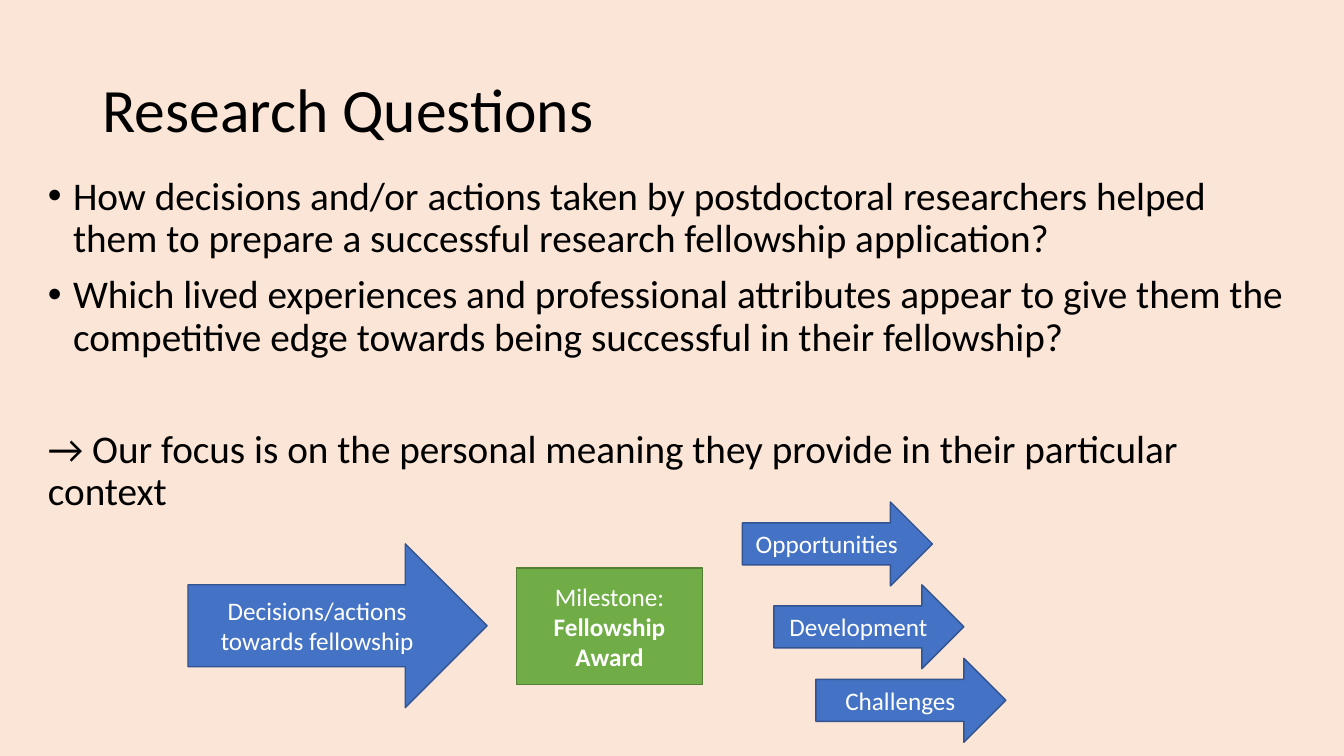
from lxml.etree import SubElement
from pptx import Presentation
from pptx.dml.color import RGBColor
from pptx.enum.shapes import MSO_SHAPE as Shape
from pptx.enum.text import MSO_ANCHOR as Anchor, MSO_AUTO_SIZE as AutoSize, PP_ALIGN as Align
from pptx.oxml.ns import qn
from pptx.util import Emu, Pt

PX = 9525  # 96 px to the inch
FONT = "Calibri"

PEACH = RGBColor(0xFB, 0xE5, 0xD6)
BLACK = RGBColor(0x00, 0x00, 0x00)
WHITE = RGBColor(0xFF, 0xFF, 0xFF)
BLUE = RGBColor(0x44, 0x72, 0xC4)
DARK_BLUE = RGBColor(0x32, 0x54, 0x91)
GREEN = RGBColor(0x70, 0xAD, 0x47)
DARK_GREEN = RGBColor(0x53, 0x80, 0x35)

QUESTIONS = [
    "How decisions and/or actions taken by postdoctoral researchers helped "
    "them to prepare a successful research fellowship application?",
    "Which lived experiences and professional attributes appear to give them "
    "the competitive edge towards being successful in their fellowship?",
]
FOCUS = "→ Our focus is on the personal meaning they provide in their particular context"
OUTCOMES = [
    ("Opportunities", 707, 478),
    ("Development", 737, 557),
    ("Challenges", 777, 627),
]


def px(length):
    return Emu(length * PX)


def set_values(target, values):
    for name, value in values.items():
        setattr(target, name, value)


class SlideBuilder:
    def __init__(self, presentation):
        self.slide = presentation.slides.add_slide(presentation.slide_layouts[1])
        background = self.slide.background.fill
        background.solid()
        background.fore_color.rgb = PEACH

    def place(self, shape, left, top, width, height):
        set_values(shape, {"left": px(left), "top": px(top),
                           "width": px(width), "height": px(height)})

    def add_text(self, paragraph, text, size, color, bold=False, **formats):
        run = paragraph.add_run()
        run.text = text
        set_values(run.font, {"name": FONT, "size": Pt(size), "bold": bold})
        run.font.color.rgb = color
        set_values(paragraph, formats)

    def paragraphs(self, frame, count):
        """Return the frame's first paragraph and as many new ones as needed."""
        return [frame.paragraphs[0]] + [frame.add_paragraph() for _ in range(count - 1)]

    def indent(self, paragraph, hang, bullet=None):
        properties = paragraph._p.get_or_add_pPr()
        properties.set("marL", str(px(hang)))
        properties.set("indent", str(px(-hang)))
        if bullet:
            SubElement(properties, qn("a:buFont"), typeface="Arial")
            SubElement(properties, qn("a:buChar"), char=bullet)
        else:
            SubElement(properties, qn("a:buNone"))

    def title(self, text, *box):
        shape = self.slide.shapes.title
        self.place(shape, *box)
        set_values(shape.text_frame, {"vertical_anchor": Anchor.MIDDLE,
                                      "auto_size": AutoSize.NONE})
        self.add_text(shape.text_frame.paragraphs[0], text, 44, BLACK,
                      alignment=Align.LEFT, line_spacing=0.9)

    def body(self, bullets, closing, *box):
        shape = self.slide.placeholders[1]
        self.place(shape, *box)
        frame = shape.text_frame
        frame.auto_size = AutoSize.NONE
        *items, last = self.paragraphs(frame, len(bullets) + 1)
        for paragraph, text in zip(items, bullets):
            self.add_text(paragraph, text, 28, BLACK, line_spacing=0.9, space_before=Pt(10))
            self.indent(paragraph, 24, "•")
        self.add_text(last, closing, 28, BLACK, line_spacing=0.9, space_before=Pt(50))
        self.indent(last, 0)

    def block(self, kind, lines, fill, outline, *box):
        """Add a filled shape with centred lines, each a (text, bold) pair."""
        shape = self.slide.shapes.add_shape(kind, *map(px, box))
        shape.shadow.inherit = False
        shape.fill.solid()
        shape.fill.fore_color.rgb = fill
        shape.line.color.rgb = outline
        shape.line.width = Pt(1)
        frame = shape.text_frame
        set_values(frame, {"word_wrap": True, "vertical_anchor": Anchor.MIDDLE})
        for paragraph, (text, bold) in zip(self.paragraphs(frame, len(lines)), lines):
            self.add_text(paragraph, text, 18, WHITE, bold, alignment=Align.CENTER)

    def arrow(self, text, *box):
        self.block(Shape.RIGHT_ARROW, [(text, False)], BLUE, DARK_BLUE, *box)


def main():
    presentation = Presentation()
    set_values(presentation, {"slide_width": px(1280), "slide_height": px(720)})
    builder = SlideBuilder(presentation)
    builder.title("Research Questions", 88, 38, 1104, 139)
    builder.body(QUESTIONS, FOCUS, 36, 163, 1199, 349)
    builder.block(Shape.RECTANGLE, [("Milestone:", False), ("Fellowship Award", True)],
                  GREEN, DARK_GREEN, 492, 541, 177, 111)
    builder.arrow("Decisions/actions towards fellowship", 179, 518, 285, 156)
    for text, left, top in OUTCOMES:
        builder.arrow(text, left, top, 181, 80)
    presentation.save("out.pptx")


if __name__ == "__main__":
    main()
